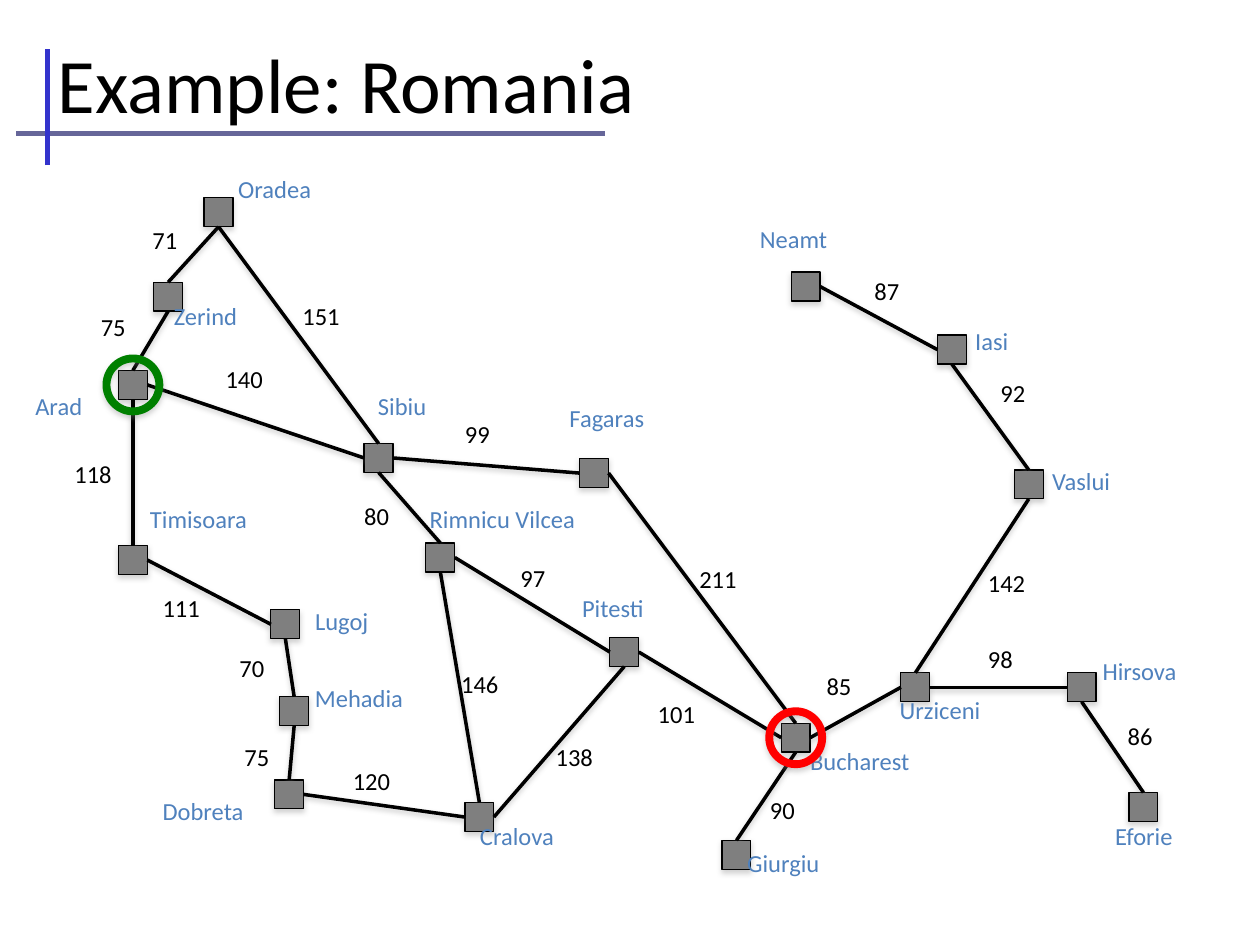
from dataclasses import dataclass

import pptx
import pptx.dml.color
import pptx.enum.shapes
import pptx.enum.text
import pptx.oxml
import pptx.oxml.ns
import pptx.util
from pptx.util import Inches

TOP, LEFT, BOTTOM, RIGHT = range(4)


@dataclass(frozen=True)
class Theme:
    font: str = "Calibri"
    title_size: int = 44
    label_size: int = 14
    ink: str = "000000"
    city_name: str = "4F81BD"
    city_fill: str = "7F7F7F"
    shadow: str = "808080"
    rule_across: str = "666699"
    rule_down: str = "3333CC"
    start: str = "008000"
    goal: str = "FF0000"


THEME = Theme()
CITY_SIZE = 0.23
RING_SIZE = 0.42
LABEL_HEIGHT = 0.32
INSET = 0.05

# city: (square left, square top, name left, name top, name width)
CITIES = {
    "Oradea": (1.62, 1.57, 1.84, 1.33, 0.74),
    "Zerind": (1.22, 2.24, 1.33, 2.34, 0.67),
    "Arad": (0.94, 2.94, 0.23, 3.05, 0.51),
    "Timisoara": (0.94, 4.33, 1.14, 3.95, 0.95),
    "Sibiu": (2.89, 3.52, 2.95, 3.05, 0.53),
    "Lugoj": (2.15, 4.84, 2.45, 4.76, 0.59),
    "Fagaras": (4.6, 3.64, 4.47, 3.15, 0.77),
    "Rimnicu Vilcea": (3.38, 4.31, 3.36, 3.95, 1.39),
    "Iasi": (7.44, 2.66, 7.69, 2.54, 0.4),
    "Neamt": (6.28, 2.16, 5.98, 1.73, 0.68),
    "Urziceni": (7.15, 5.34, 7.09, 5.47, 0.83),
    "Bucharest": (6.2, 5.74, 6.38, 5.87, 0.97),
    "Vaslui": (8.05, 3.73, 8.3, 3.65, 0.61),
    "Giurgiu": (5.73, 6.67, 5.88, 6.68, 0.74),
    "Hirsova": (8.47, 5.34, 8.7, 5.16, 0.75),
    "Eforie": (8.96, 6.29, 8.8, 6.47, 0.63),
    "Dobreta": (2.18, 6.19, 1.24, 6.27, 0.81),
    "Mehadia": (2.22, 5.53, 2.45, 5.37, 0.83),
    "Pitesti": (4.84, 5.06, 4.57, 4.66, 0.66),
    "Cralova": (3.69, 6.37, 3.76, 6.47, 0.77),
}

# (from city, side, to city, side, distance, distance left, distance top)
ROADS = [
    ("Arad", TOP, "Zerind", BOTTOM, 75, 0.75, 2.43),
    ("Zerind", TOP, "Oradea", BOTTOM, 71, 1.16, 1.74),
    ("Sibiu", TOP, "Oradea", BOTTOM, 151, 2.35, 2.34),
    ("Arad", RIGHT, "Sibiu", LEFT, 140, 1.74, 2.84),
    ("Rimnicu Vilcea", TOP, "Sibiu", BOTTOM, 80, 2.84, 3.93),
    ("Sibiu", RIGHT, "Fagaras", LEFT, 99, 3.64, 3.28),
    ("Timisoara", TOP, "Arad", BOTTOM, 118, 0.54, 3.59),
    ("Timisoara", RIGHT, "Lugoj", LEFT, 111, 1.24, 4.66),
    ("Mehadia", TOP, "Lugoj", BOTTOM, 70, 1.85, 5.13),
    ("Dobreta", TOP, "Mehadia", BOTTOM, 75, 1.89, 5.84),
    ("Cralova", LEFT, "Dobreta", RIGHT, 120, 2.75, 6.03),
    ("Cralova", TOP, "Rimnicu Vilcea", BOTTOM, 146, 3.61, 5.26),
    ("Pitesti", LEFT, "Rimnicu Vilcea", RIGHT, 97, 4.08, 4.42),
    ("Cralova", RIGHT, "Pitesti", BOTTOM, 138, 4.36, 5.84),
    ("Bucharest", LEFT, "Pitesti", RIGHT, 101, 5.17, 5.5),
    ("Bucharest", TOP, "Fagaras", RIGHT, 211, 5.5, 4.43),
    ("Giurgiu", TOP, "Bucharest", BOTTOM, 90, 6.06, 6.26),
    ("Bucharest", RIGHT, "Urziceni", LEFT, 85, 6.51, 5.28),
    ("Iasi", LEFT, "Neamt", RIGHT, 87, 6.89, 2.14),
    ("Vaslui", TOP, "Iasi", BOTTOM, 92, 7.89, 2.95),
    ("Urziceni", TOP, "Vaslui", BOTTOM, 142, 7.79, 4.46),
    ("Urziceni", RIGHT, "Hirsova", LEFT, 98, 7.79, 5.06),
    ("Eforie", TOP, "Hirsova", BOTTOM, 86, 8.9, 5.67),
]


def rgb(value):
    return pptx.dml.color.RGBColor.from_string(value)


def style_line(line, color, width):
    line.color.rgb = rgb(color)
    line.width = pptx.util.Pt(width)


def style_text(frame, size, color):
    frame.margin_left = frame.margin_right = Inches(INSET)
    frame.margin_top = frame.margin_bottom = Inches(INSET)
    paragraph = frame.paragraphs[0]
    paragraph.alignment = pptx.enum.text.PP_ALIGN.LEFT
    for run in paragraph.runs:
        run.font.name = THEME.font
        run.font.size = pptx.util.Pt(size)
        run.font.color.rgb = rgb(color)


def set_shadow(element, opacity=0, distance=0):
    """Append an effect list after the line; zero opacity leaves it empty."""
    shadow = (
        f'<a:outerShdw blurRad="{pptx.util.Pt(3)}" dist="{pptx.util.Pt(distance)}"'
        f' dir="5400000" rotWithShape="0"><a:srgbClr val="{THEME.shadow}">'
        f'<a:alpha val="{opacity * 1000}"/></a:srgbClr></a:outerShdw>'
    ) if opacity else ""
    element.spPr.append(pptx.oxml.parse_xml(
        f'<a:effectLst {pptx.oxml.ns.nsdecls("a")}>{shadow}</a:effectLst>'))


def add_line(slide, start, end, color, width):
    line = slide.shapes.add_connector(
        pptx.enum.shapes.MSO_CONNECTOR.STRAIGHT, *map(Inches, start + end))
    style_line(line.line, color, width)
    return line


def add_title(slide, text):
    for start, end, color in (((0.13, 1.06), (4.8, 1.06), THEME.rule_across),
                              ((0.38, 1.31), (0.38, 0.39), THEME.rule_down)):
        set_shadow(add_line(slide, start, end, color, 3)._element)
    title = slide.shapes.title
    title.left, title.top = Inches(0.41), Inches(0.1)
    title.width, title.height = Inches(8.92), Inches(1.12)
    title.text_frame.text = text
    title.text_frame.vertical_anchor = pptx.enum.text.MSO_ANCHOR.MIDDLE
    style_text(title.text_frame, THEME.title_size, THEME.ink)


def add_city(slide, left, top):
    size = Inches(CITY_SIZE)
    city = slide.shapes.add_shape(pptx.enum.shapes.MSO_SHAPE.RECTANGLE,
                                  Inches(left), Inches(top), size, size)
    city.fill.solid()
    city.fill.fore_color.rgb = rgb(THEME.city_fill)
    style_line(city.line, THEME.ink, 0.75)
    set_shadow(city._element, 35, 1.8)
    return city


def add_road(slide, origin, origin_side, target, target_side):
    road = add_line(slide, (0, 0), (1, 1), THEME.ink, 2)
    road.begin_connect(origin, origin_side)
    road.end_connect(target, target_side)
    set_shadow(road._element, 38, 1.6)


def add_label(slide, text, left, top, width, color):
    label = slide.shapes.add_textbox(Inches(left), Inches(top),
                                     Inches(width), Inches(LABEL_HEIGHT))
    frame = label.text_frame
    frame.text = text
    frame.word_wrap = False
    frame.auto_size = pptx.enum.text.MSO_AUTO_SIZE.SHAPE_TO_FIT_TEXT
    style_text(frame, THEME.label_size, color)


def add_ring(slide, city, color):
    """Circle a city's square, sharing its centre."""
    size = Inches(RING_SIZE)
    margin = (size - city.width) // 2
    ring = slide.shapes.add_shape(pptx.enum.shapes.MSO_SHAPE.OVAL,
                                  city.left - margin, city.top - margin, size, size)
    ring.fill.background()
    style_line(ring.line, color, 4.5)
    set_shadow(ring._element, 35, 1.8)


def main():
    deck = pptx.Presentation()
    deck.slide_width, deck.slide_height = Inches(10), Inches(7.5)
    slide = deck.slides.add_slide(deck.slide_layouts.get_by_name("Title Only"))
    add_title(slide, "Example: Romania")

    squares = {name: add_city(slide, left, top)
               for name, (left, top, *_) in CITIES.items()}
    for origin, origin_side, target, target_side, *_ in ROADS:
        add_road(slide, squares[origin], origin_side, squares[target], target_side)
    for *_, distance, left, top in ROADS:
        digits = str(distance)
        add_label(slide, digits, left, top, 0.12 + 0.1 * len(digits), THEME.ink)
    for name, (_, _, left, top, width) in CITIES.items():
        add_label(slide, name, left, top, width, THEME.city_name)
    add_ring(slide, squares["Arad"], THEME.start)
    add_ring(slide, squares["Bucharest"], THEME.goal)
    deck.save("out.pptx")


if __name__ == "__main__":
    main()
